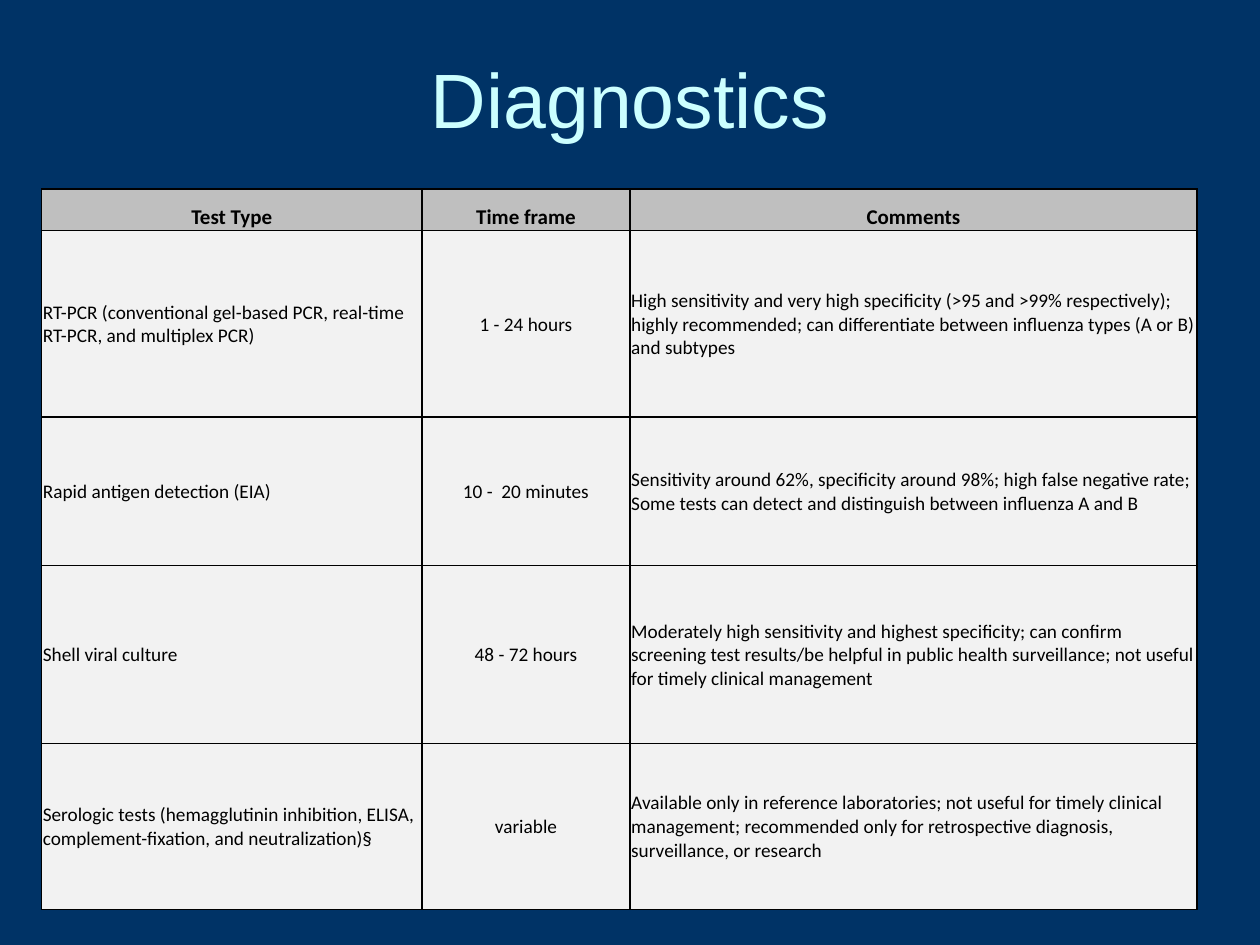
from lxml.etree import SubElement
from pptx import Presentation
from pptx.dml.color import RGBColor
from pptx.enum.text import MSO_ANCHOR as Anchor, PP_ALIGN as Align
from pptx.oxml.ns import qn
from pptx.util import Inches, Pt

TITLE = "Diagnostics"
HEADER = ("Test Type", "Time frame", "Comments")
TESTS = [
    ("RT-PCR (conventional gel-based PCR, real-time RT-PCR, and multiplex PCR)",
     "1 - 24 hours",
     "High sensitivity and very high specificity (>95 and >99% respectively); highly "
     "recommended; can differentiate between influenza types (A or B) and subtypes"),
    ("Rapid antigen detection (EIA)",
     "10 -  20 minutes",
     "Sensitivity around 62%, specificity around 98%; high false negative rate; "
     "Some tests can detect and distinguish between influenza A and B"),
    ("Shell viral culture",
     "48 - 72 hours",
     "Moderately high sensitivity and highest specificity; can confirm screening test "
     "results/be helpful in public health surveillance; not useful for timely clinical "
     "management"),
    ("Serologic tests (hemagglutinin inhibition, ELISA, complement-fixation, and "
     "neutralization)§",
     "variable",
     "Available only in reference laboratories; not useful for timely clinical "
     "management; recommended only for retrospective diagnosis, surveillance, or research"),
]
COLUMN_WIDTHS = (3.02, 1.65, 4.5)
ROW_HEIGHTS = (0.33, 1.48, 1.18, 1.41, 1.32)
NAVY, PALE_CYAN, BLACK = "003366", "CCFFFF", "000000"
HEADER_GREY, BODY_GREY = "BFBFBF", "F2F2F2"


def color(hex_value):
    return RGBColor.from_string(hex_value)


def set_font(paragraph, name, size, hex_value, bold=False):
    font = paragraph.font
    font.name, font.size, font.bold = name, Pt(size), bold
    font.color.rgb = color(hex_value)


def add_borders(cell):
    properties = cell._tc.get_or_add_tcPr()
    for index, side in enumerate(("lnL", "lnR", "lnT", "lnB")):
        line = properties.makeelement(qn(f"a:{side}"), {"w": str(Pt(1))})
        fill = SubElement(line, qn("a:solidFill"))
        SubElement(fill, qn("a:srgbClr"), val=BLACK)
        properties.insert(index, line)


def format_cell(cell, text, is_header, centered):
    cell.text = text
    cell.margin_left = cell.margin_right = cell.margin_top = Inches(0.01)
    cell.margin_bottom = 0
    cell.vertical_anchor = Anchor.BOTTOM if is_header else Anchor.MIDDLE
    cell.fill.solid()
    cell.fill.fore_color.rgb = color(HEADER_GREY if is_header else BODY_GREY)
    paragraph = cell.text_frame.paragraphs[0]
    paragraph.alignment = Align.CENTER if centered else Align.LEFT
    set_font(paragraph, "Calibri", 12 if is_header else 11, BLACK, is_header)
    add_borders(cell)


def add_test_table(slide):
    rows = [HEADER, *TESTS]
    table = slide.shapes.add_table(
        len(rows), len(HEADER), Inches(0.33), Inches(1.5),
        Inches(sum(COLUMN_WIDTHS)), Inches(sum(ROW_HEIGHTS))).table
    for column, width in zip(table.columns, COLUMN_WIDTHS):
        column.width = Inches(width)
    for row, height in zip(table.rows, ROW_HEIGHTS):
        row.height = Inches(height)
    for row_index, texts in enumerate(rows):
        for column_index, text in enumerate(texts):
            is_header = row_index == 0
            format_cell(table.cell(row_index, column_index), text,
                        is_header, is_header or column_index == 1)


def set_title(slide):
    title = slide.shapes.title
    title.left, title.top = Inches(0.5), Inches(0.3)
    title.width, title.height = Inches(9), Inches(1.25)
    frame = title.text_frame
    frame.text = TITLE
    frame.vertical_anchor = Anchor.TOP
    frame.margin_top = Inches(0.11)
    paragraph = frame.paragraphs[0]
    paragraph.alignment = Align.CENTER
    set_font(paragraph, "Arial", 44, PALE_CYAN)


def main():
    presentation = Presentation()
    presentation.slide_width, presentation.slide_height = Inches(10), Inches(7.5)
    slide = presentation.slides.add_slide(presentation.slide_layouts.get_by_name("Title Only"))
    slide.background.fill.solid()
    slide.background.fill.fore_color.rgb = color(NAVY)
    add_test_table(slide)
    set_title(slide)
    presentation.save("out.pptx")


if __name__ == "__main__":
    main()
